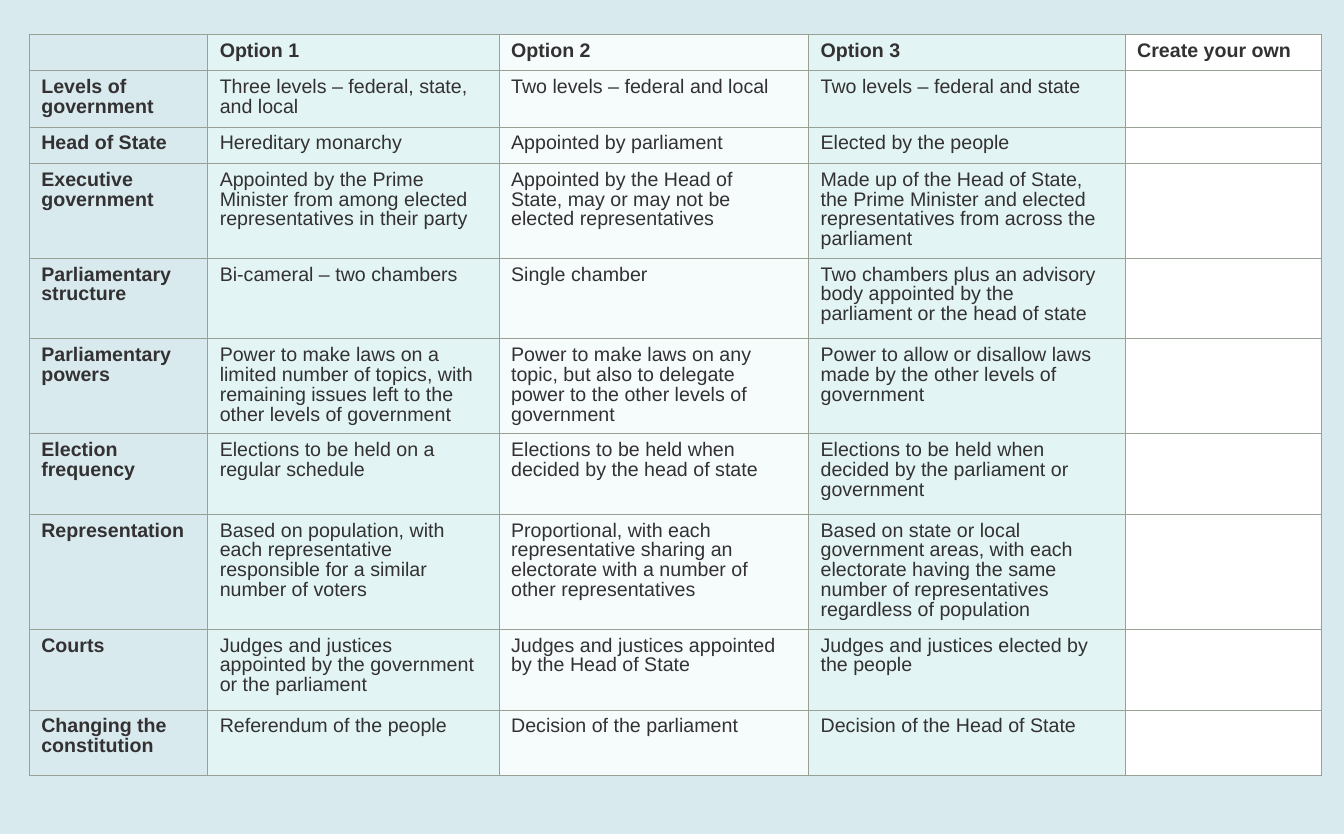
from lxml.etree import SubElement
from pptx import Presentation
from pptx.dml.color import RGBColor
from pptx.oxml.ns import qn
from pptx.util import Inches, Pt

HEAD = ["", "Option 1", "Option 2", "Option 3", "Create your own"]
BODY = [
    ["Levels of government", "Three levels – federal, state, and local",
     "Two levels – federal and local", "Two levels – federal and state"],
    ["Head of State", "Hereditary monarchy", "Appointed by parliament",
     "Elected by the people"],
    ["Executive government",
     "Appointed by the Prime Minister from among elected representatives in their party",
     "Appointed by the Head of State, may or may not be elected representatives",
     "Made up of the Head of State, the Prime Minister and elected representatives "
     "from across the parliament"],
    ["Parliamentary structure", "Bi-cameral – two chambers", "Single chamber",
     "Two chambers plus an advisory body appointed by the parliament or the head of state"],
    ["Parliamentary powers",
     "Power to make laws on a limited number of topics, with remaining issues left "
     "to the other levels of government",
     "Power to make laws on any topic, but also to delegate power to the other "
     "levels of government",
     "Power to allow or disallow laws made by the other levels of government"],
    ["Election frequency", "Elections to be held on a regular schedule",
     "Elections to be held when decided by the head of state",
     "Elections to be held when decided by the parliament or government"],
    ["Representation",
     "Based on population, with each representative responsible for a similar "
     "number of voters",
     "Proportional, with each representative sharing an electorate with a number "
     "of other representatives",
     "Based on state or local government areas, with each electorate having the "
     "same number of representatives regardless of population"],
    ["Courts", "Judges and justices appointed by the government or the parliament",
     "Judges and justices appointed by the Head of State",
     "Judges and justices elected by the people"],
    ["Changing the constitution", "Referendum of the people",
     "Decision of the parliament", "Decision of the Head of State"],
]
WIDTHS = [1.77, 2.89, 3.07, 3.14, 1.95]
HEIGHTS = [0.36, 0.56, 0.36, 0.94, 0.8, 0.94, 0.8, 1.14, 0.8, 0.65]
FILLS = [None, "E2F4F3", "F6FCFC", "E2F4F3", "FFFFFF"]


def color(code):
    return RGBColor.from_string(code)


def write(frame, text, size=14, bold=False, ink="333132", face="Arial"):
    frame.word_wrap = True
    para = frame.paragraphs[0]
    para.line_spacing = 0.9
    if not text:
        SubElement(para._p, qn("a:endParaRPr"), sz=str(size * 100))
        return
    run = para.add_run()
    run.text = text
    font = run.font
    font.name, font.size, font.bold = face, Pt(size), bold
    font.color.rgb = color(ink)


class Deck:
    """Holds the table style and the current slide."""

    edge = "98A196"
    back = "D9EAEF"

    def __init__(self, wide, high):
        self.show = Presentation()
        self.show.slide_width, self.show.slide_height = Inches(wide), Inches(high)
        self.slide = self.show.slides.add_slide(self.show.slide_layouts[6])
        fill = self.slide.background.fill
        fill.solid()
        fill.fore_color.rgb = color(self.back)

    def border(self, cell):
        props = cell._tc.get_or_add_tcPr()
        for side in ("lnL", "lnR", "lnT", "lnB"):
            line = SubElement(props, qn("a:" + side), w=str(Pt(0.5)))
            solid = SubElement(line, qn("a:solidFill"))
            SubElement(solid, qn("a:srgbClr"), val=self.edge)

    def cell(self, cell, text, fill, bold):
        cell.margin_left, cell.margin_right = Inches(0.12), Inches(0.21)
        cell.margin_top = cell.margin_bottom = Inches(0.07 if text else 0)
        self.border(cell)
        if fill:
            cell.fill.solid()
            cell.fill.fore_color.rgb = color(fill)
        else:
            cell.fill.background()
        write(cell.text_frame, text, bold=bold)

    def table(self, left, top, rows, widths, heights, fills):
        table = self.slide.shapes.add_table(
            len(rows), len(widths), Inches(left), Inches(top),
            Inches(sum(widths)), Inches(sum(heights))).table
        table.first_row = table.horz_banding = False
        for col, width in zip(table.columns, widths):
            col.width = Inches(width)
        for row, height in zip(table.rows, heights):
            row.height = Inches(height)
        for r, texts in enumerate(rows):
            for c, text in enumerate(texts):
                self.cell(table.cell(r, c), text, fills[c], r == 0 or c == 0)


def main():
    deck = Deck(13.33, 8.27)
    rows = [HEAD] + [row + [""] for row in BODY]
    deck.table(0.29, 0.34, rows, WIDTHS, HEIGHTS, FILLS)
    deck.show.save("out.pptx")


if __name__ == "__main__":
    main()
